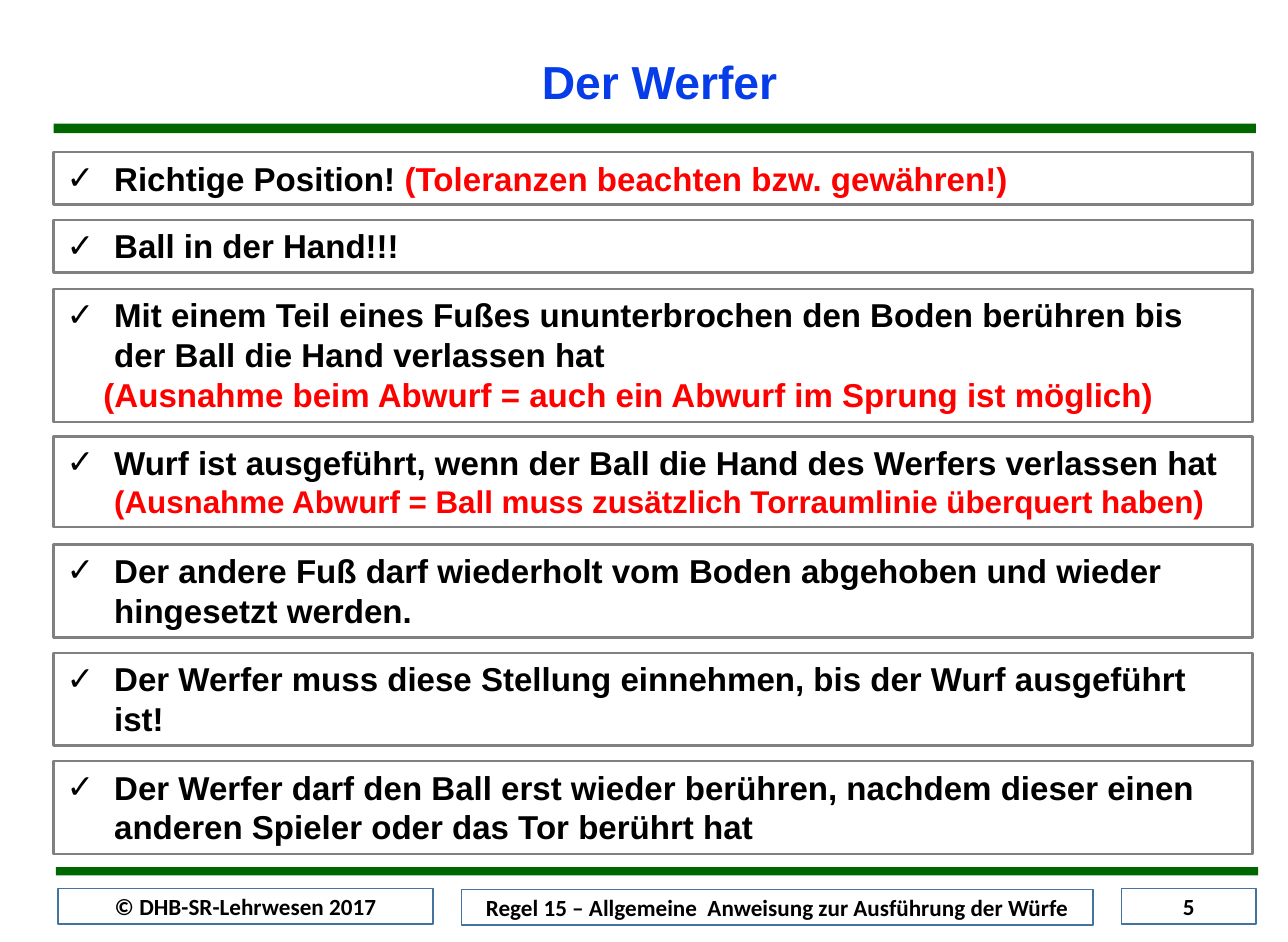
from dataclasses import dataclass

from lxml import etree
from pptx import Presentation
from pptx.dml.color import RGBColor
from pptx.enum.shapes import MSO_SHAPE
from pptx.enum.text import MSO_ANCHOR, MSO_AUTO_SIZE, PP_ALIGN
from pptx.oxml.ns import qn
from pptx.shapes.autoshape import Shape
from pptx.slide import Slide
from pptx.util import Emu, Pt

RECTANGLE = MSO_SHAPE.RECTANGLE
MIDDLE, TOP = MSO_ANCHOR.MIDDLE, MSO_ANCHOR.TOP
CENTER, LEFT = PP_ALIGN.CENTER, PP_ALIGN.LEFT
NO_AUTOFIT = MSO_AUTO_SIZE.NONE
TITLE_ONLY = 5
EMU_PER_PX = 9144  # 100 px to the inch


@dataclass(frozen=True)
class Theme:
    title: RGBColor = RGBColor(0x06, 0x3D, 0xE8)
    bar: RGBColor = RGBColor(0x00, 0x66, 0x00)
    text: RGBColor = RGBColor(0x00, 0x00, 0x00)
    remark: RGBColor = RGBColor(0xFF, 0x00, 0x00)
    rule_border: RGBColor = RGBColor(0x80, 0x80, 0x80)
    footer_border: RGBColor = RGBColor(0x43, 0x73, 0x9E)
    footer_fill: RGBColor = RGBColor(0xFF, 0xFF, 0xFF)
    font: str = "Arial"
    footer_font: str = "Calibri"
    title_size: float = 28
    rule_size: float = 20
    inline_remark_size: float = 19
    footer_size: float = 14


@dataclass(frozen=True)
class Box:
    left: int
    top: int
    width: int
    height: int


@dataclass(frozen=True)
class Rule:
    top: int
    height: int
    text: str
    remark: str = ""
    remark_size: float = 20
    remark_below: bool = False


@dataclass(frozen=True)
class FooterField:
    box: Box
    text: str


THEME = Theme()
RULE_LEFT, RULE_WIDTH = 45, 1008
RULE_INSET_X, RULE_INSET_Y = 11, 5
BULLET_INDENT, REMARK_INDENT = 40, 31

TITLE_BOX = Box(325, 45, 459, 52)
BARS = [Box(45, 104, 1011, 8), Box(47, 729, 1011, 7)]
RULES = [
    Rule(128, 44, "Richtige Position! ", "(Toleranzen beachten bzw. gewähren!)"),
    Rule(185, 44, "Ball in der Hand!!!"),
    Rule(243, 112,
         "Mit einem Teil eines Fußes ununterbrochen den Boden berühren bis "
         "der Ball die Hand verlassen hat",
         "(Ausnahme beim Abwurf = auch ein Abwurf im Sprung ist möglich)",
         remark_below=True),
    Rule(367, 76,
         "Wurf ist ausgeführt, wenn der Ball die Hand des Werfers verlassen hat ",
         "(Ausnahme Abwurf = Ball muss zusätzlich Torraumlinie überquert haben)",
         remark_size=THEME.inline_remark_size),
    Rule(458, 78,
         "Der andere Fuß darf wiederholt vom Boden abgehoben und wieder "
         "hingesetzt werden."),
    Rule(549, 78,
         "Der Werfer muss diese Stellung einnehmen, bis der Wurf ausgeführt ist!"),
    Rule(640, 78,
         "Der Werfer darf den Ball erst wieder berühren, nachdem dieser einen "
         "anderen Spieler oder das Tor berührt hat"),
]
FOOTER = [
    FooterField(Box(49, 747, 315, 30), "© DHB-SR-Lehrwesen 2017"),
    FooterField(Box(943, 747, 113, 30), "5"),
    FooterField(Box(388, 748, 531, 30),
                "Regel 15 – Allgemeine  Anweisung zur Ausführung der Würfe"),
]


def px(length: int) -> Emu:
    return Emu(length * EMU_PER_PX)


def style_font(font, name: str, size: float, color: RGBColor) -> None:
    font.name, font.size, font.bold = name, Pt(size), True
    font.color.rgb = color


def set_indent(paragraph, margin: int, first_line: int = 0) -> etree._Element:
    properties = paragraph._p.get_or_add_pPr()
    properties.set("marL", str(px(margin)))
    properties.set("indent", str(px(first_line)))
    return properties


def add_check_mark(paragraph) -> None:
    properties = set_indent(paragraph, BULLET_INDENT, -BULLET_INDENT)
    etree.SubElement(properties, qn("a:buFont"), typeface=THEME.font)
    etree.SubElement(properties, qn("a:buChar"), char="✓")


def add_rectangle(slide: Slide, box: Box) -> Shape:
    rectangle = slide.shapes.add_shape(
        RECTANGLE, px(box.left), px(box.top), px(box.width), px(box.height))
    rectangle.shadow.inherit = False
    return rectangle


def add_bar(slide: Slide, box: Box) -> None:
    bar = add_rectangle(slide, box)
    bar.fill.solid()
    bar.fill.fore_color.rgb = THEME.bar
    bar.line.fill.background()


def add_footer_field(slide: Slide, field: FooterField) -> None:
    frame = add_rectangle(slide, field.box)
    frame.fill.solid()
    frame.fill.fore_color.rgb = THEME.footer_fill
    frame.line.color.rgb = THEME.footer_border
    frame.line.width = Pt(1)
    frame.text_frame.vertical_anchor = MIDDLE
    label = frame.text_frame.paragraphs[0]
    label.text = field.text
    label.alignment = CENTER
    style_font(label.font, THEME.footer_font, THEME.footer_size, THEME.text)


def add_rule(slide: Slide, rule: Rule) -> None:
    frame = add_rectangle(slide, Box(RULE_LEFT, rule.top, RULE_WIDTH, rule.height))
    frame.fill.background()
    frame.line.color.rgb = THEME.rule_border
    frame.line.width = Pt(1.5)
    content = frame.text_frame
    content.word_wrap = True
    content.vertical_anchor = TOP
    content.margin_left = content.margin_right = px(RULE_INSET_X)
    content.margin_top = content.margin_bottom = px(RULE_INSET_Y)

    statement = content.paragraphs[0]
    statement.alignment = LEFT
    add_check_mark(statement)
    style_font(statement.font, THEME.font, THEME.rule_size, THEME.text)
    statement.add_run().text = rule.text
    if rule.remark_below:
        exception = content.add_paragraph()
        exception.text = rule.remark
        exception.alignment = LEFT
        set_indent(exception, REMARK_INDENT)
        style_font(exception.font, THEME.font, rule.remark_size, THEME.remark)
    elif rule.remark:
        remark = statement.add_run()
        remark.text = rule.remark
        style_font(remark.font, THEME.font, rule.remark_size, THEME.remark)


def set_title(slide: Slide, text: str) -> None:
    title = slide.shapes.title
    title.left, title.top = px(TITLE_BOX.left), px(TITLE_BOX.top)
    title.width, title.height = px(TITLE_BOX.width), px(TITLE_BOX.height)
    title.text_frame.auto_size = NO_AUTOFIT
    title.text_frame.vertical_anchor = MIDDLE
    heading = title.text_frame.paragraphs[0]
    heading.text = text
    heading.alignment = CENTER
    heading.line_spacing = 0.9
    style_font(heading.font, THEME.font, THEME.title_size, THEME.title)


def main() -> None:
    presentation = Presentation()
    presentation.slide_width, presentation.slide_height = px(1083), px(792)
    slide = presentation.slides.add_slide(presentation.slide_layouts[TITLE_ONLY])
    set_title(slide, "Der Werfer")
    for bar in BARS:
        add_bar(slide, bar)
    for field in FOOTER:
        add_footer_field(slide, field)
    for rule in RULES:
        add_rule(slide, rule)
    presentation.save("out.pptx")


if __name__ == "__main__":
    main()
